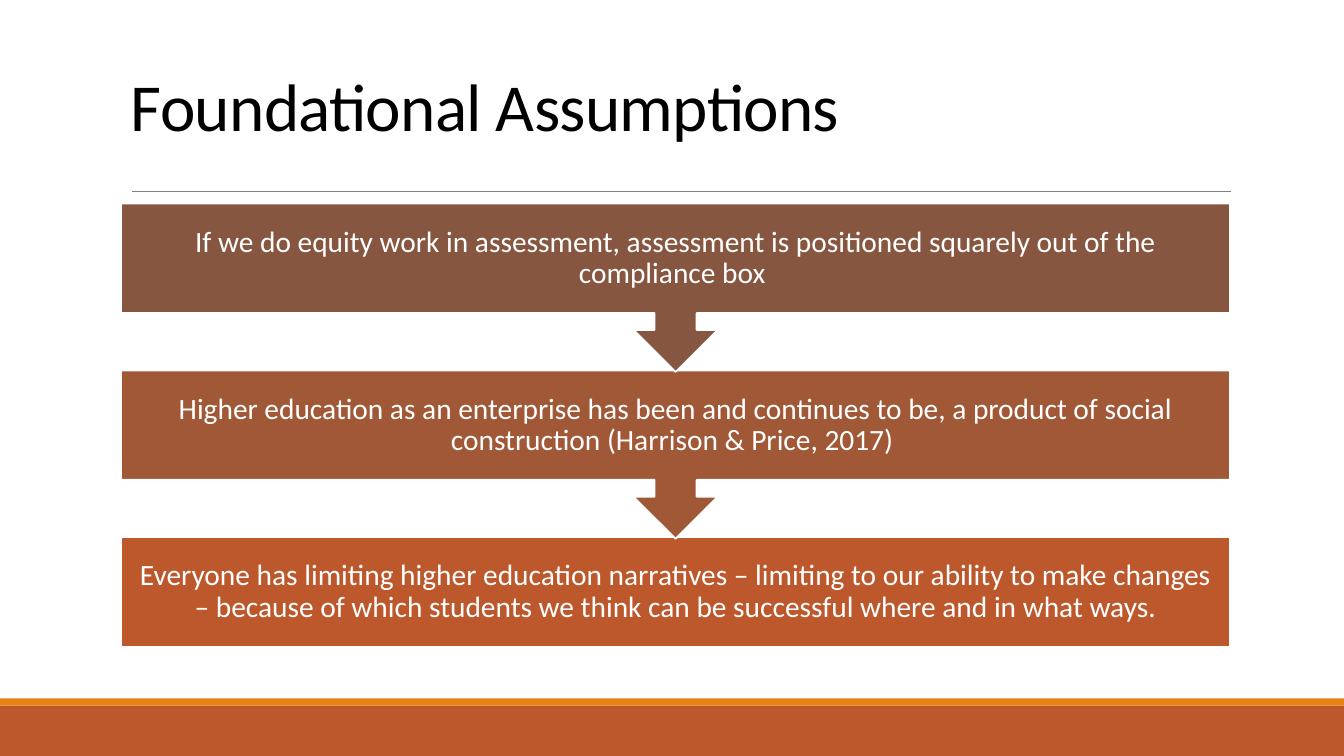
from dataclasses import dataclass
from lxml.etree import SubElement
from pptx import Presentation
from pptx.dml.color import RGBColor
from pptx.enum.shapes import MSO_CONNECTOR, MSO_SHAPE
from pptx.enum.text import MSO_ANCHOR, PP_ALIGN
from pptx.oxml.ns import qn
from pptx.util import Inches, Pt

TITLE = "Foundational Assumptions"
STEPS = [
    ("If we do equity work in assessment, assessment is positioned squarely "
     "out of the compliance box ", "865640"),
    ("Higher education as an enterprise has been and continues to be, a product "
     "of social construction (Harrison & Price, 2017) ", "A05837"),
    ("Everyone has limiting higher education narratives – limiting to our ability "
     "to make changes – because of which students we think can be successful "
     "where and in what ways.", "BD582C"),
]


@dataclass(frozen=True)
class Theme:
    font: str = "Calibri"
    base: str = "BD582C"
    stripe: str = "E48312"
    rule: str = "808080"
    ink: str = "000000"
    white: str = "FFFFFF"
    head: float = 48
    body: float = 21


LOOK = Theme()
WIDE, HIGH = 13.33, 7.5
LEFT, SPAN = 1.2, 11
TOP, PITCH = 2.02, 1.655
BOX, CALL = 1.09, 1.67
FOOT, BAND = 0.5, 0.07

deck = Presentation()
deck.slide_width, deck.slide_height = Inches(WIDE), Inches(HIGH)
slide = deck.slides.add_slide(deck.slide_layouts[6])


def color(code):
    return RGBColor.from_string(code)


def block(kind, area, fill, edge=None):
    shape = slide.shapes.add_shape(kind, *map(Inches, area))
    shape.shadow.inherit = False
    shape.fill.solid()
    shape.fill.fore_color.rgb = color(fill)
    if edge:
        shape.line.color.rgb = color(edge)
        shape.line.width = Pt(1.25)
    else:
        shape.line.fill.background()
    return shape


def label(text, area, size, ink, align, lead, inset=None):
    frame = slide.shapes.add_textbox(*map(Inches, area)).text_frame
    frame.word_wrap = True
    frame.vertical_anchor = MSO_ANCHOR.MIDDLE
    if inset is not None:
        frame.margin_left = frame.margin_right = Inches(inset)
        frame.margin_top = frame.margin_bottom = Inches(inset)
    para = frame.paragraphs[0]
    para.alignment, para.line_spacing = align, lead
    run = para.add_run()
    run.text = text
    run.font.name, run.font.size = LOOK.font, Pt(size)
    run.font.color.rgb = color(ink)
    return run


block(MSO_SHAPE.RECTANGLE, (0, HIGH - FOOT, WIDE, FOOT), LOOK.base)
block(MSO_SHAPE.RECTANGLE, (0, HIGH - FOOT - BAND, WIDE, BAND), LOOK.stripe)

rule = slide.shapes.add_connector(
    MSO_CONNECTOR.STRAIGHT, *map(Inches, (1.31, 1.9, 12.21, 1.9)))
rule.line.color.rgb = color(LOOK.rule)
rule.line.width = Pt(0.5)
SubElement(rule._element.spPr, qn("a:effectLst"))

title = label(TITLE, (LEFT, 0.31, SPAN, 1.59), LOOK.head, LOOK.ink,
              PP_ALIGN.LEFT, 0.85)
title.font._element.set("spc", "-50")

last = len(STEPS) - 1
for row, (text, fill) in reversed(list(enumerate(STEPS))):
    top = TOP + row * PITCH
    area = (LEFT, top, SPAN, BOX)
    if row == last:
        block(MSO_SHAPE.RECTANGLE, area, fill, LOOK.white)
    else:
        call = block(MSO_SHAPE.UP_ARROW_CALLOUT, (LEFT, top, SPAN, CALL),
                     fill, LOOK.white)
        call.rotation = 180
    label(text, area, LOOK.body, LOOK.white, PP_ALIGN.CENTER, 0.9, 0.16)

deck.save("out.pptx")
